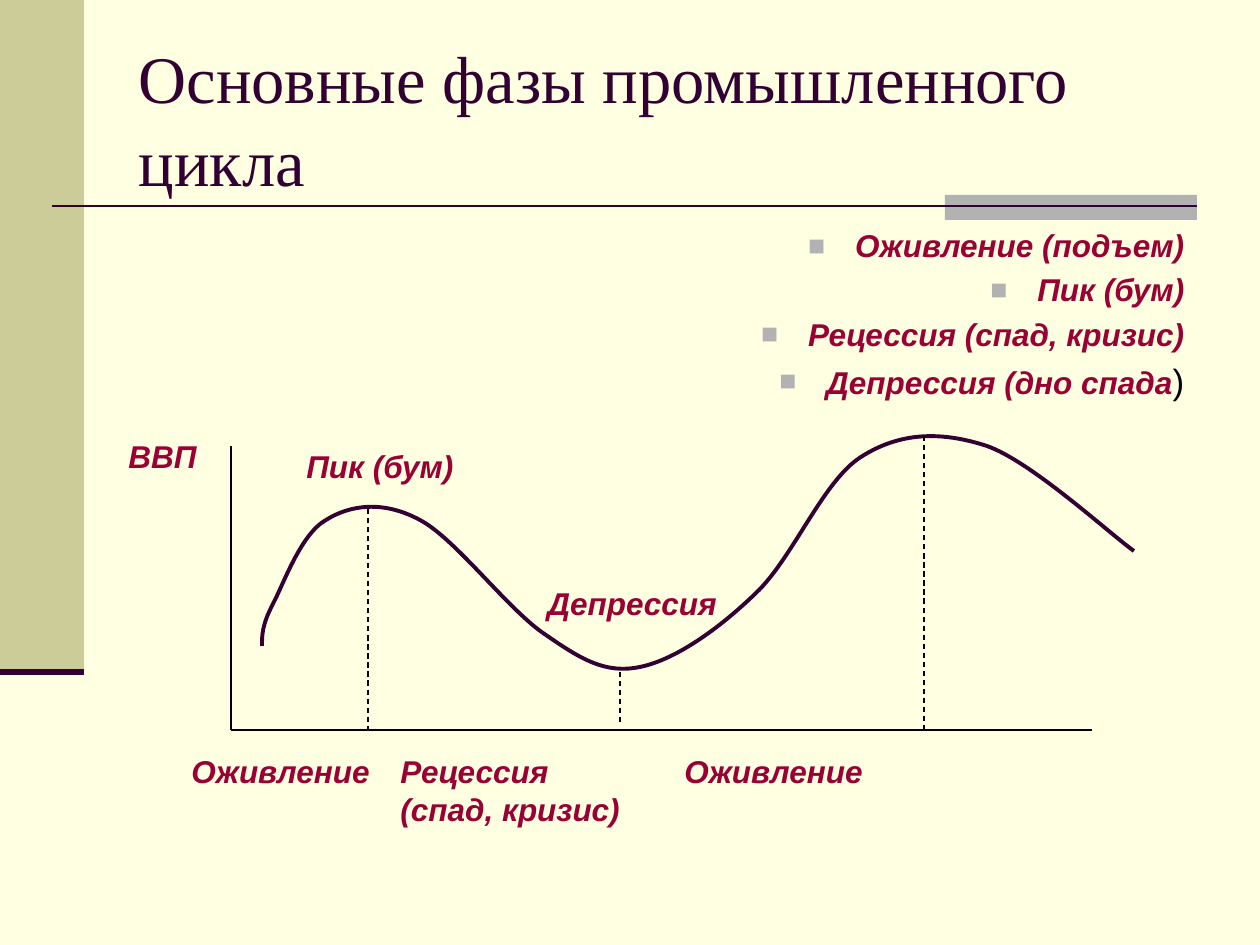
from lxml import etree
from pptx import Presentation
from pptx.dml.color import RGBColor
from pptx.enum.dml import MSO_LINE
from pptx.enum.shapes import MSO_CONNECTOR, MSO_SHAPE
from pptx.enum.text import MSO_ANCHOR, MSO_AUTO_SIZE, PP_ALIGN
from pptx.oxml.ns import qn
from pptx.util import Emu, Pt

PX = 914400 / 126
STRAIGHT = MSO_CONNECTOR.STRAIGHT
RECTANGLE = MSO_SHAPE.RECTANGLE
DASH = MSO_LINE.DASH
LEFT, RIGHT = PP_ALIGN.LEFT, PP_ALIGN.RIGHT
TOP, MIDDLE = MSO_ANCHOR.TOP, MSO_ANCHOR.MIDDLE
NO_FIT = MSO_AUTO_SIZE.NONE

INK, BLACK, GREY = "330033", "000000", "B2B2B2"
TITLE = {"name": "Times New Roman", "size": Pt(38), "bold": False}
ACCENT = {"name": "Arial", "size": Pt(18), "bold": True, "italic": True}
PLAIN = {"name": "Arial", "size": Pt(20), "bold": False, "italic": False}

PHASES = ["Оживление (подъем)", "Пик (бум)", "Рецессия (спад, кризис)", "Депрессия (дно спада"]
LABELS = [
    ("ВВП", 116, 431, 105, 50),
    ("Оживление", 179, 746, 210, 50),
    ("Пик (бум)", 294, 441, 179, 50),
    ("Рецессия (спад, кризис)", 388, 746, 273, 88),
    ("Депрессия", 535, 578, 200, 50),
    ("Оживление", 672, 746, 252, 50),
]
AXES = [(231, 446, 231, 730), (231, 730, 1092, 730)]
MARKERS = [(368, 509, 368, 730), (924, 436, 924, 730), (620, 672, 620, 725)]
CYCLE = [
    (262, 646),
    (262, 635), (262, 625), (273, 604),
    (284, 583), (301, 534), (326, 520),
    (350, 505), (383, 500), (420, 520),
    (456, 539), (509, 611), (546, 635),
    (582, 660), (606, 674), (640, 667),
    (675, 660), (719, 629), (756, 593),
    (793, 558), (823, 481), (861, 457),
    (900, 432), (941, 431), (987, 446),
    (1032, 462), (1110, 534), (1134, 551),
]


def px(length):
    return Emu(round(length * PX))


def colour(value):
    return RGBColor.from_string(value)


class SlideBuilder:
    """Holds the style and the current slide, and adds each kind of element."""

    def __init__(self, slide, background, accent):
        self.slide = slide
        self.shapes = slide.shapes
        self.accent = accent
        fill = slide.background.fill
        fill.solid()
        fill.fore_color.rgb = colour(background)

    def place(self, shape, left, top, width, height):
        for name, value in zip(("left", "top", "width", "height"), (left, top, width, height)):
            setattr(shape, name, px(value))

    def frame(self, box, anchor=TOP):
        frame = box.text_frame
        settings = {"word_wrap": True, "auto_size": NO_FIT, "vertical_anchor": anchor}
        for name, value in settings.items():
            setattr(frame, name, value)
        return frame

    def span(self, para, text, values, hex_colour):
        span = para.add_run()
        span.text = text
        for name, value in values.items():
            setattr(span.font, name, value)
        span.font.color.rgb = colour(hex_colour)

    def bullet(self, para):
        properties = para._p.get_or_add_pPr()
        properties.set("marL", str(px(47)))
        properties.set("indent", str(-px(47)))
        bullet_colour = etree.SubElement(properties, qn("a:buClr"))
        etree.SubElement(bullet_colour, qn("a:srgbClr"), val=GREY)
        etree.SubElement(properties, qn("a:buSzPct"), val="90000")
        etree.SubElement(properties, qn("a:buFont"), typeface="Arial")
        etree.SubElement(properties, qn("a:buChar"), char="■")

    def title(self, text, *area):
        box = self.shapes.title
        self.place(box, *area)
        para = self.frame(box, MIDDLE).paragraphs[0]
        para.alignment = LEFT
        para.line_spacing = 1.05
        self.span(para, text, TITLE, INK)

    def body(self, items, ending, *area):
        box = self.slide.placeholders[1]
        self.place(box, *area)
        frame = self.frame(box)
        for index, item in enumerate(items):
            para = frame.add_paragraph() if index else frame.paragraphs[0]
            para.alignment = RIGHT
            self.bullet(para)
            self.span(para, item, ACCENT, self.accent)
        self.span(para, ending, PLAIN, BLACK)

    def label(self, text, *area):
        box = self.shapes.add_textbox(*map(px, area))
        self.span(self.frame(box).paragraphs[0], text, ACCENT, self.accent)

    def rectangle(self, fill, *area):
        shape = self.shapes.add_shape(RECTANGLE, *map(px, area))
        shape.shadow.inherit = False
        shape.fill.solid()
        shape.fill.fore_color.rgb = colour(fill)
        shape.line.fill.background()

    def line(self, ends, hex_colour, width, dash=None):
        connector = self.shapes.add_connector(STRAIGHT, *map(px, ends))
        connector.line.color.rgb = colour(hex_colour)
        connector.line.width = Pt(width)
        if dash:
            connector.line.dash_style = dash
        etree.SubElement(connector.element.spPr, qn("a:effectLst"))

    def curve(self, points, hex_colour, width):
        builder = self.shapes.build_freeform(*points[0], scale=PX)
        builder.add_line_segments(points[1:], close=False)
        shape = builder.convert_to_shape()
        shape.shadow.inherit = False
        shape.fill.background()
        shape.line.color.rgb = colour(hex_colour)
        shape.line.width = Pt(width)
        outline = next(shape.element.iter(qn("a:path")))
        segments = outline.findall(qn("a:lnTo"))
        for start in range(0, len(segments), 3):
            bezier = etree.SubElement(outline, qn("a:cubicBezTo"))
            for segment in segments[start:start + 3]:
                bezier.append(segment[0])
                outline.remove(segment)


def main():
    deck = Presentation()
    deck.slide_width, deck.slide_height = px(1260), px(945)
    page = SlideBuilder(deck.slides.add_slide(deck.slide_layouts[1]), "FFFFE1", "990033")

    page.rectangle("CCCC99", 0, 0, 84, 672)
    page.rectangle(GREY, 945, 195, 252, 25)
    page.line((52, 206, 1197, 206), INK, 1.5)
    page.line((0, 672, 84, 672), INK, 3.5)

    page.title("Основные фазы промышленного цикла", 126, 38, 1071, 157)
    page.body(PHASES, ")", 126, 220, 1071, 624)

    for axis in AXES:
        page.line(axis, BLACK, 1.5)
    page.curve(CYCLE, INK, 2.25)
    for marker in MARKERS:
        page.line(marker, BLACK, 0.75, DASH)
    for label in LABELS:
        page.label(*label)

    deck.save("out.pptx")


if __name__ == "__main__":
    main()
